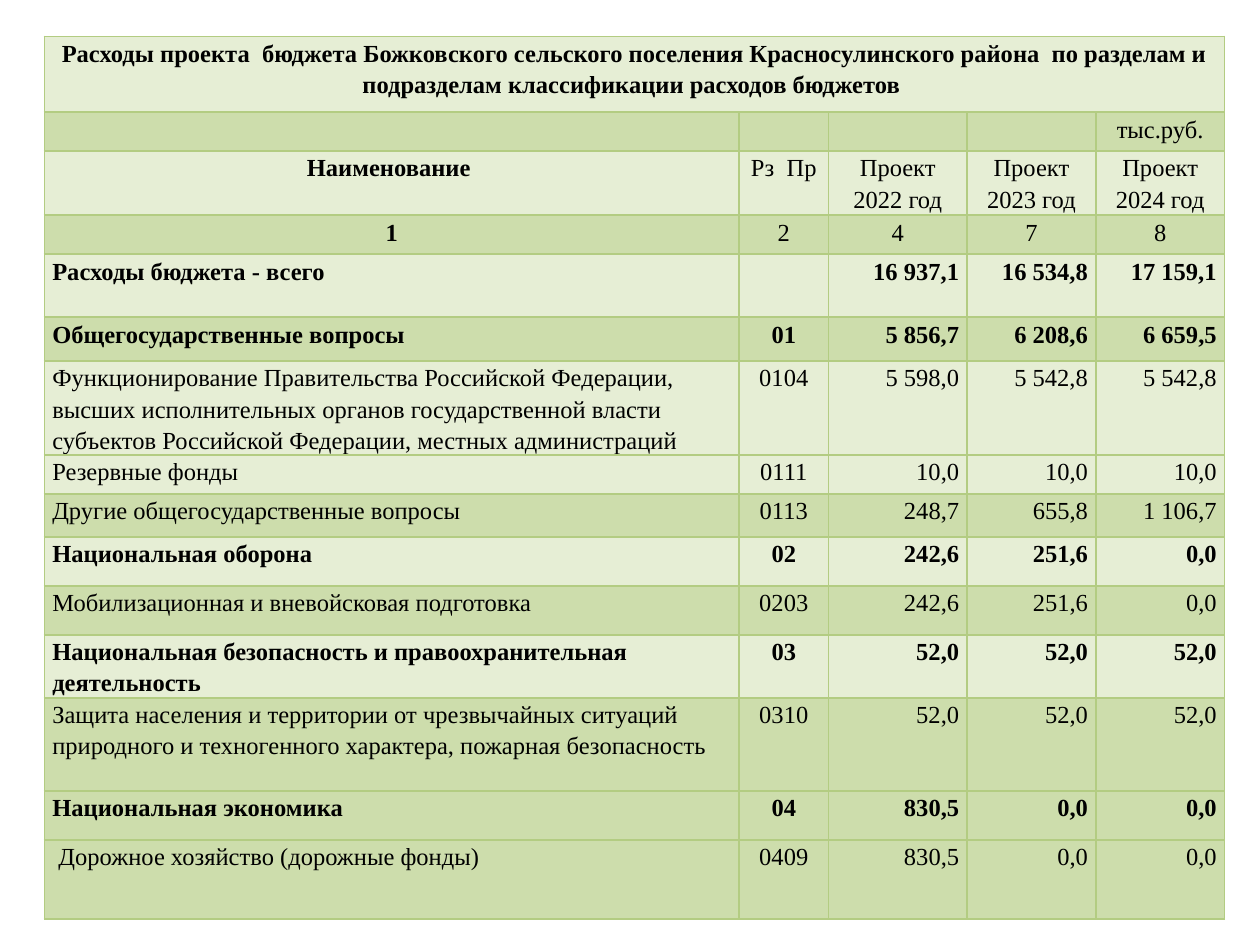
from dataclasses import dataclass

from lxml.etree import SubElement
from pptx import Presentation
from pptx.dml.color import RGBColor
from pptx.enum.text import PP_ALIGN
from pptx.oxml.ns import qn
from pptx.util import Pt


@dataclass(frozen=True)
class Theme:
    font: str = "Times New Roman"
    size: float = 14
    line_spacing: float = 1.15
    text: str = "000000"
    light: str = "E6EED5"
    dark: str = "CDDDAC"
    border: str = "B3CC82"
    border_width: float = 1
    side_margin: float = 4.5


@dataclass(frozen=True)
class BudgetRow:
    height: float
    fill: str
    texts: tuple[str, ...]
    bold_columns: int = 0  # how many leading columns are bold
    header: bool = False


THEME = Theme()
LIGHT, DARK = THEME.light, THEME.dark
COLUMN_WIDTHS = (397, 51, 79.2, 73.6, 73.6)
BODY_ALIGNMENT = (PP_ALIGN.LEFT, PP_ALIGN.CENTER) + (PP_ALIGN.RIGHT,) * 3
ALL = len(COLUMN_WIDTHS)

ROWS = (
    BudgetRow(43.3, LIGHT, (
        "Расходы проекта  бюджета Божковского сельского поселения Красносулинского района"
        "  по разделам и подразделам классификации расходов бюджетов ", "", "", "", ""), ALL, True),
    BudgetRow(22.3, DARK, ("", "", "", "", "тыс.руб."), header=True),
    BudgetRow(36.6, LIGHT, ("Наименование ", "Рз  Пр", "Проект 2022 год",
                            "Проект 2023 год", "Проект 2024 год"), 1, True),
    BudgetRow(22.3, DARK, ("1", "2", "4", "7", "8"), 1, True),
    BudgetRow(36, LIGHT, ("Расходы бюджета - всего", "", "16 937,1", "16 534,8", "17 159,1"), ALL),
    BudgetRow(25.1, DARK, ("Общегосударственные вопросы", "01",
                           "5 856,7", "6 208,6", "6 659,5"), ALL),
    BudgetRow(53.7, LIGHT, (
        "Функционирование Правительства Российской Федерации, высших исполнительных органов "
        "государственной власти субъектов Российской Федерации, местных администраций",
        "0104", "5 598,0", "5 542,8", "5 542,8")),
    BudgetRow(22.3, LIGHT, ("Резервные фонды", "0111", "10,0", "10,0", "10,0")),
    BudgetRow(24.6, DARK, ("Другие общегосударственные вопросы", "0113",
                           "248,7", "655,8", "1 106,7")),
    BudgetRow(28, LIGHT, ("Национальная оборона", "02", "242,6", "251,6", "0,0"), ALL),
    BudgetRow(28, DARK, ("Мобилизационная и вневойсковая подготовка", "0203",
                         "242,6", "251,6", "0,0")),
    BudgetRow(36, LIGHT, ("Национальная безопасность и правоохранительная деятельность", "03",
                          "52,0", "52,0", "52,0"), ALL),
    BudgetRow(53.1, DARK, (
        "Защита населения и территории от чрезвычайных ситуаций природного и техногенного "
        "характера, пожарная безопасность", "0310", "52,0", "52,0", "52,0")),
    BudgetRow(28, DARK, ("Национальная экономика", "04", "830,5", "0,0", "0,0"), ALL),
    BudgetRow(45.1, DARK, (" Дорожное хозяйство (дорожные фонды)", "0409",
                           "830,5", "0,0", "0,0")),
)


def draw_borders(cell) -> None:
    properties = cell._tc.get_or_add_tcPr()
    for side in ("a:lnL", "a:lnR", "a:lnT", "a:lnB"):
        line = SubElement(properties, qn(side), w=str(Pt(THEME.border_width)))
        solid = SubElement(line, qn("a:solidFill"))
        SubElement(solid, qn("a:srgbClr"), val=THEME.border)


def style_cell(cell, fill: str) -> None:
    draw_borders(cell)
    cell.fill.solid()
    cell.fill.fore_color.rgb = RGBColor.from_string(fill)
    cell.margin_left = cell.margin_right = Pt(THEME.side_margin)
    cell.margin_top = cell.margin_bottom = Pt(0)


def write_cell(cell, text: str, alignment: PP_ALIGN, bold: bool) -> None:
    para = cell.text_frame.paragraphs[0]
    if not text:
        # An empty cell keeps the body size so that it does not stretch its row.
        SubElement(para._p, qn("a:endParaRPr"), sz=str(round(THEME.size * 100)))
        return
    para.text = text
    para.alignment = alignment
    para.line_spacing = THEME.line_spacing
    for span in para.runs:
        span.font.name = THEME.font
        span.font.size = Pt(THEME.size)
        span.font.bold = bold
        span.font.color.rgb = RGBColor.from_string(THEME.text)


def draw_budget_table(page, left: float, top: float) -> None:
    width, height = sum(COLUMN_WIDTHS), sum(row.height for row in ROWS)
    table = page.shapes.add_table(len(ROWS), ALL, Pt(left), Pt(top), Pt(width), Pt(height)).table
    table.first_row = table.horz_banding = False
    for column, column_width in zip(table.columns, COLUMN_WIDTHS):
        column.width = Pt(column_width)
    for row_number, row in enumerate(ROWS):
        table.rows[row_number].height = Pt(row.height)
        for column_number, text in enumerate(row.texts):
            cell = table.cell(row_number, column_number)
            alignment = PP_ALIGN.CENTER if row.header else BODY_ALIGNMENT[column_number]
            style_cell(cell, row.fill)
            write_cell(cell, text, alignment, column_number < row.bold_columns)
    table.cell(0, 0).merge(table.cell(0, ALL - 1))


def main() -> None:
    deck = Presentation()
    deck.slide_width, deck.slide_height = Pt(720), Pt(540)
    page = deck.slides.add_slide(deck.slide_layouts[6])
    draw_budget_table(page, left=25.4, top=20.8)
    deck.save("out.pptx")


if __name__ == "__main__":
    main()
